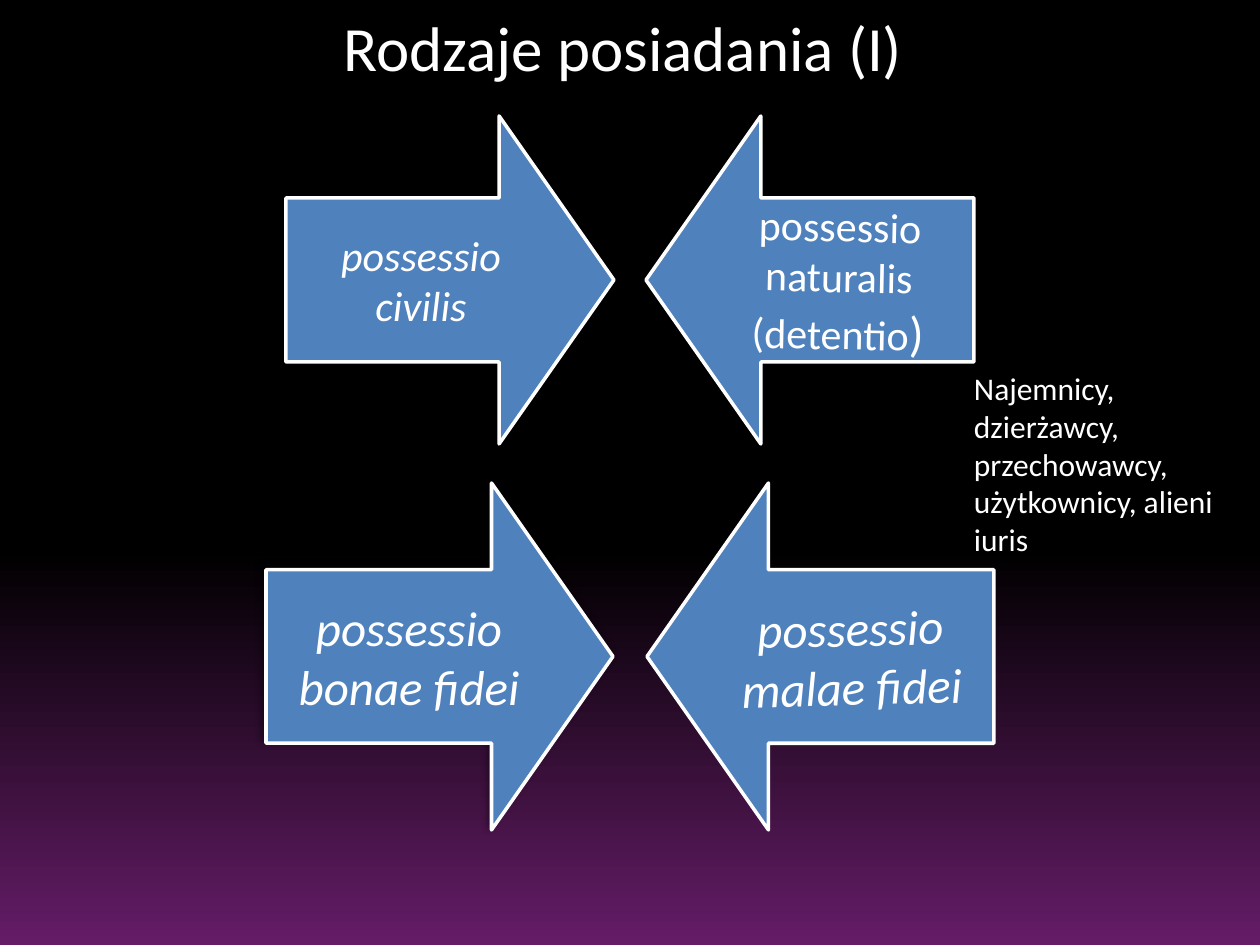
from dataclasses import dataclass

from lxml.etree import SubElement
from pptx import Presentation
from pptx.dml.color import RGBColor
from pptx.enum.shapes import MSO_SHAPE as Shape
from pptx.enum.text import MSO_ANCHOR as Anchor, PP_ALIGN as Align
from pptx.oxml.ns import qn
from pptx.util import Pt

PX = 914400 // 126


@dataclass(frozen=True)
class Theme:
    font: str = "Calibri"
    text: str = "FFFFFF"
    arrow: str = "4F81BD"
    night: str = "000000"
    violet: str = "641C66"
    title: int = 36
    large: int = 28
    medium: int = 24
    note: int = 18


THEME = Theme()
MIDDLE = 630
INSET = 6

TITLE = "Rodzaje posiadania (I)"
NOTE = "Najemnicy, dzierżawcy, przechowawcy, użytkownicy, alieni iuris"

# Each label: spans of (text, size), italic, text height, rotation
ROWS = [
    dict(top=116, side=328, gap=32, label_width=270, shadows=(225, 315), labels=[
        ([("possessio\vcivilis", THEME.medium)], True, 115, 0),
        ([("possessio naturalis (detentio", THEME.medium), (")", THEME.large)], False, 175, 1.3),
    ]),
    dict(top=483, side=347, gap=34, label_width=286, shadows=(225, None), labels=[
        ([("possessio bonae fidei", THEME.large)], True, 134, 0),
        ([("possessio malae fidei", THEME.large)], True, 134, 358.6),
    ]),
]


def color(value):
    return RGBColor.from_string(value)


def px(*lengths):
    return [round(length * PX) for length in lengths]


def paint_background(page):
    fill = page.background.fill
    fill.gradient()
    fill.gradient_angle = 270
    stops = [(0.58, THEME.night), (1, THEME.violet)]
    for stop, (position, shade) in zip(fill.gradient_stops, stops):
        stop.position = position
        stop.color.rgb = color(shade)


def add_text(shapes, area, spans, align=Align.CENTER, anchor=Anchor.TOP, italic=False):
    box = shapes.add_textbox(*px(*area))
    frame = box.text_frame
    frame.word_wrap = True
    frame.vertical_anchor = anchor
    frame.margin_left = frame.margin_right = frame.margin_top = frame.margin_bottom = INSET * PX
    para = frame.paragraphs[0]
    para.text = spans[0][0]
    para.alignment = align
    for text, _ in spans[1:]:
        para.add_run().text = text
    for span in para.runs:
        font = span.font
        font.name, font.italic = THEME.font, italic
        font.size = Pt(spans[0][1])
        font.color.rgb = color(THEME.text)
    if len(spans) > 1:
        para.runs[-1].font.size = Pt(spans[-1][1])
    return box


def add_shadow(shape, direction):
    effects = shape._element.spPr.find(qn("a:effectLst"))
    shadow = SubElement(effects, qn("a:outerShdw"), blurRad=str(Pt(4)), dist=str(Pt(3)),
                        dir=str(direction * 60000), rotWithShape="0")
    shade = SubElement(shadow, qn("a:srgbClr"), val=THEME.night)
    SubElement(shade, qn("a:alpha"), val="40000")


def add_arrow(shapes, left, top, side, rotation, shadow):
    arrow = shapes.add_shape(Shape.RIGHT_ARROW, *px(left, top, side, side))
    arrow.adjustments[0], arrow.adjustments[1] = 0.5, 0.35
    arrow.rotation = rotation
    arrow.fill.solid()
    arrow.fill.fore_color.rgb = color(THEME.arrow)
    arrow.line.color.rgb = color(THEME.text)
    arrow.line.width = Pt(2)
    arrow.shadow.inherit = False
    if shadow is not None:
        add_shadow(arrow, shadow)


def add_row(page, top, side, gap, label_width, shadows, labels):
    """Draw two arrows that point at each other, with labels at their outer ends."""
    shapes = page.shapes.add_group_shape().shapes
    outer = gap / 2 + side
    lefts = [(MIDDLE - outer, MIDDLE - outer), (MIDDLE + gap / 2, MIDDLE + outer - label_width)]
    for (left, label_left), rotation, shadow, label in zip(lefts, (0, 180), shadows, labels):
        spans, italic, height, tilt = label
        add_arrow(shapes, left, top, side, rotation, shadow)
        area = (label_left, top + (side - height) / 2, label_width, height)
        add_text(shapes, area, spans, anchor=Anchor.MIDDLE, italic=italic).rotation = tilt


def main():
    deck = Presentation()
    deck.slide_width, deck.slide_height = px(1260, 945)
    page = deck.slides.add_slide(deck.slide_layouts[6])
    paint_background(page)
    add_text(page.shapes, (49, 3, 1148, 90), [(TITLE, THEME.title)])
    for row in ROWS:
        add_row(page, **row)
    add_text(page.shapes, (968, 363, 258, 205), [(NOTE, THEME.note)], align=Align.LEFT)
    deck.save("out.pptx")


if __name__ == "__main__":
    main()
